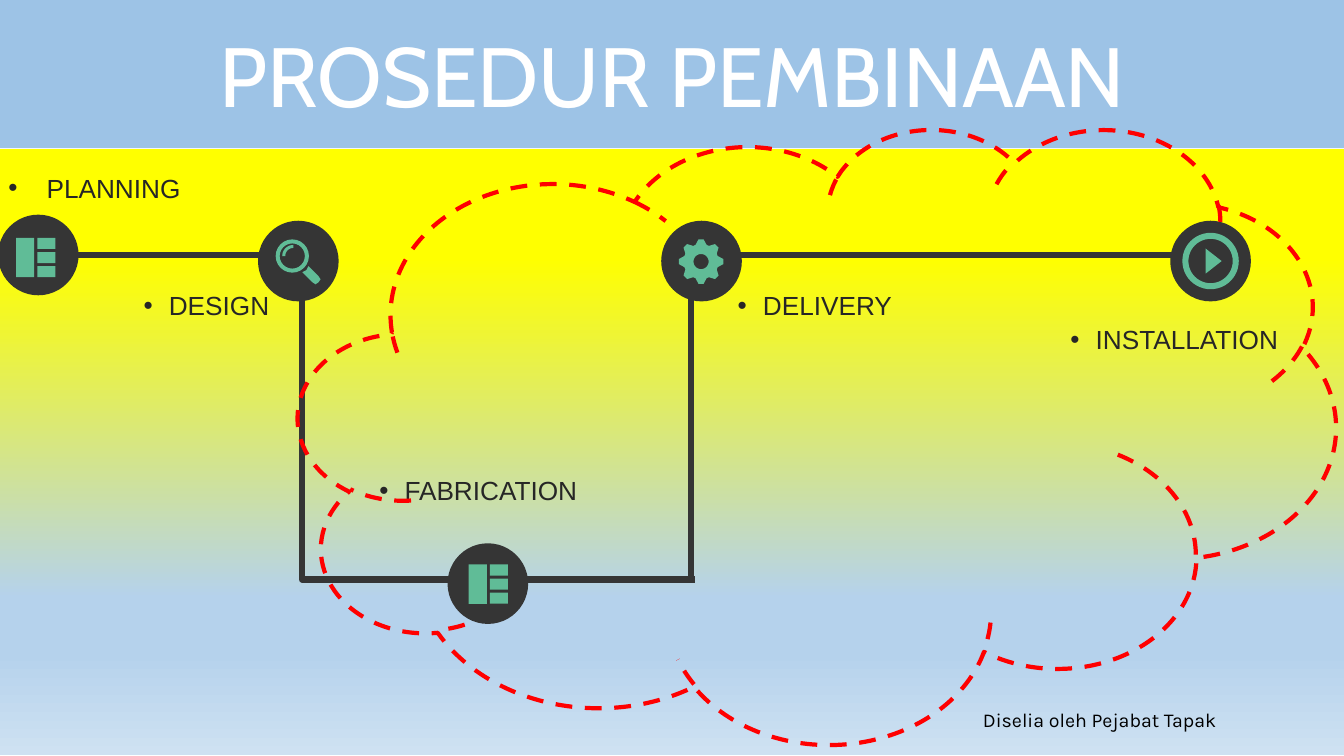
import dataclasses
import math

import lxml.etree
import pptx
import pptx.dml.color
import pptx.enum.dml
import pptx.enum.shapes
import pptx.enum.text
import pptx.oxml.ns
import pptx.util

CELL = pptx.util.Inches(0.1)
COLUMNS, ROWS = 133.33, 75

SHAPE = pptx.enum.shapes.MSO_SHAPE
ALIGN = pptx.enum.text.PP_ALIGN
MIDDLE = pptx.enum.text.MSO_ANCHOR.MIDDLE


@dataclasses.dataclass(frozen=True)
class Theme:
    banner: str = "9DC3E6"
    title_text: str = "FFFFFF"
    dark: str = "353535"
    icon: str = "60BC97"
    label_text: str = "262626"
    credit_text: str = "000000"
    cloud: str = "FF0000"
    backdrop: tuple = ((18, "FFFF00"), (74, "B5D2EC"), (83, "B5D2EC"), (100, "CEE1F2"))
    title_size: float = 60
    label_size: float = 18.7
    credit_size: float = 14
    route_width: float = 4.5
    cloud_width: float = 3


THEME = Theme()


def cells(*counts):
    """Turn numbers of grid cells into lengths."""
    return [pptx.util.Emu(round(count * CELL)) for count in counts]


def rgb(code):
    return pptx.dml.color.RGBColor.from_string(code)


def add_xml(parent, tag, **attributes):
    element = lxml.etree.SubElement(parent, pptx.oxml.ns.qn(tag))
    for name, value in attributes.items():
        element.set(name, str(value))
    return element


def paint(shape, color):
    shape.shadow.inherit = False
    shape.fill.solid()
    shape.fill.fore_color.rgb = rgb(color)
    shape.line.fill.background()


def format_text(text_frame, font_name, size, color, alignment):
    paragraph = text_frame.paragraphs[0]
    paragraph.alignment = alignment
    font = paragraph.runs[0].font
    font.name, font.size, font.color.rgb = font_name, pptx.util.Pt(size), rgb(color)
    return paragraph


def add_preset(slide, kind, left, top, width, height, color):
    shape = slide.shapes.add_shape(kind, *cells(left, top, width, height))
    paint(shape, color)
    return shape


def add_outline(slide, points, hole=()):
    """Draw a closed icon part, with an optional hole, from grid points."""
    start, *rest = [cells(*point) for point in points]
    builder = slide.shapes.build_freeform(*start)
    builder.add_line_segments(rest, close=True)
    if hole:
        start, *rest = [cells(*point) for point in hole]
        builder.move_to(*start)
        builder.add_line_segments(rest, close=True)
    paint(builder.convert_to_shape(), THEME.icon)


def polar(x, y, radius, degrees):
    angle = math.radians(degrees)
    return x + radius * math.cos(angle), y + radius * math.sin(angle)


def add_title(slide, text):
    title = slide.shapes.title
    title.left, title.top, title.width, title.height = cells(0, 0, COLUMNS, 14.7)
    title.fill.solid()
    title.fill.fore_color.rgb = rgb(THEME.banner)
    title.text_frame.text = text
    title.text_frame.auto_size = pptx.enum.text.MSO_AUTO_SIZE.NONE
    title.text_frame.vertical_anchor = MIDDLE
    format_text(title.text_frame, "Cabin", THEME.title_size, THEME.title_text, ALIGN.CENTER)


def add_backdrop(slide):
    backdrop = add_preset(slide, SHAPE.RECTANGLE, -0.2, 14.8, 133.6, 60.1, THEME.banner)
    backdrop.fill.gradient()
    backdrop.fill.gradient_angle = 270
    stops = next(backdrop.element.iter(pptx.oxml.ns.qn("a:gsLst")))
    for stop in list(stops):
        stops.remove(stop)
    for percent, color in THEME.backdrop:
        stop = add_xml(stops, "a:gs", pos=percent * 1000)
        add_xml(stop, "a:srgbClr", val=color)


def add_text_box(slide, text, left, top, width, height):
    box = slide.shapes.add_textbox(*cells(left, top, width, height))
    box.text_frame.word_wrap = True
    box.text_frame.text = text
    return box.text_frame


def add_step_label(slide, text, left, top, width, height, alignment, hanging=2.5, spacing=0.9):
    text_frame = add_text_box(slide, text, left, top, width, height)
    paragraph = format_text(text_frame, "Arial", THEME.label_size, THEME.label_text, alignment)
    paragraph.line_spacing = spacing
    paragraph.space_before = pptx.util.Pt(10)
    properties = paragraph.runs[0].font._element.getparent().getparent().get_or_add_pPr()
    indent, = cells(hanging)
    properties.set("marL", str(indent))
    properties.set("indent", str(-indent))
    add_xml(properties, "a:buFont", typeface="Arial")
    add_xml(properties, "a:buChar", char="•")


def add_credit(slide, text):
    text_frame = add_text_box(slide, text, 96.2, 67.7, 27.9, 7.4)
    text_frame.vertical_anchor = MIDDLE
    text_frame.margin_left, text_frame.margin_top = cells(1.3, 0.7)
    text_frame.margin_right, text_frame.margin_bottom = cells(1.3, 0.7)
    format_text(text_frame, "Karla", THEME.credit_size, THEME.credit_text, ALIGN.LEFT)


def add_route(slide, begin, end, bend):
    """Join two grid points by an elbow that turns at a share of its width."""
    route = slide.shapes.add_connector(
        pptx.enum.shapes.MSO_CONNECTOR.ELBOW, *cells(*begin, *end))
    route.line.color.rgb = rgb(THEME.dark)
    route.line.width = pptx.util.Pt(THEME.route_width)
    properties = route.element.spPr
    add_xml(properties, "a:effectLst")
    geometry = properties.find(pptx.oxml.ns.qn("a:prstGeom"))
    adjustments = geometry.find(pptx.oxml.ns.qn("a:avLst"))
    if adjustments is None:
        adjustments = add_xml(geometry, "a:avLst")
    add_xml(adjustments, "a:gd", name="adj1", fmla=f"val {round(bend * 100000)}")


def add_disc(slide, x, y):
    add_preset(slide, SHAPE.OVAL, x - 4, y - 4, 8, 8, THEME.dark)


def add_ring(slide, x, y, radius, thickness):
    ring = add_preset(
        slide, SHAPE.DONUT, x - radius, y - radius, 2 * radius, 2 * radius, THEME.icon)
    ring.adjustments[0] = thickness / (2 * radius)


def add_layout_icon(slide, x, y):
    add_preset(slide, SHAPE.RECTANGLE, x - 1.9, y - 1.9, 1.8, 3.9, THEME.icon)
    for row in range(3):
        add_preset(slide, SHAPE.RECTANGLE, x + 0.2, y - 1.9 + 1.4 * row, 1.8, 1.1, THEME.icon)


def add_magnifier_icon(slide, x, y):
    add_ring(slide, x, y, 1.65, 0.4)
    handle = ((1.6, 1), (2.6, 2), (2.8, 2.3), (2.6, 2.6), (2.3, 2.8), (2, 2.6), (1, 1.6), (1.4, 1.4))
    add_outline(slide, [(x + across, y + down) for across, down in handle])
    sweep = range(180, 271, 10)
    add_outline(slide, [polar(x + 0.1, y, 1.1, angle) for angle in sweep]
                + [polar(x + 0.1, y, 0.8, angle) for angle in reversed(sweep)])


def add_gear_icon(slide, x, y):
    tooth = ((1.74, -18.4), (2.22, -6.5), (2.22, 6.5), (1.74, 18.4))
    rim = [polar(x, y, radius, 45 * number + angle)
           for number in range(8) for radius, angle in tooth]
    add_outline(slide, rim, [polar(x, y, 0.75, angle) for angle in range(0, 360, 10)])


def add_play_icon(slide, x, y):
    add_ring(slide, x, y, 2.8, 0.6)
    add_outline(slide, [(x - 0.5, y - 1.25), (x + 1.1, y), (x - 0.5, y + 1.25)])


def add_cloud(slide):
    cloud = slide.shapes.add_shape(SHAPE.CLOUD, *cells(29.6, 12.7, 102.9, 61))
    cloud.shadow.inherit = False
    cloud.fill.background()
    cloud.line.color.rgb = rgb(THEME.cloud)
    cloud.line.width = pptx.util.Pt(THEME.cloud_width)
    cloud.line.dash_style = pptx.enum.dml.MSO_LINE.DASH


def main():
    presentation = pptx.Presentation()
    presentation.slide_width, presentation.slide_height = cells(COLUMNS, ROWS)
    slide = presentation.slides.add_slide(presentation.slide_layouts.get_by_name("Title Only"))
    add_title(slide, "PROSEDUR PEMBINAAN")
    add_backdrop(slide)
    add_step_label(slide, "PLANNING", -4.4, 16.6, 23.3, 3.3, ALIGN.RIGHT, hanging=3.8, spacing=1.0)
    add_step_label(slide, "DESIGN", 4.4, 28.6, 23.3, 3.3, ALIGN.RIGHT)
    add_step_label(slide, "FABRICATION", 35.9, 46.9, 23.1, 3.3, ALIGN.CENTER)
    add_step_label(slide, "DELIVERY", 72.2, 28.6, 23.3, 3.3, ALIGN.LEFT)
    add_step_label(slide, "INSTALLATION", 104.2, 31.9, 24.6, 2.9, ALIGN.CENTER)
    add_route(slide, (0, 25.3), (68.9, 57.5), 0.435)
    add_route(slide, (68.9, 57.5), (116.7, 25.3), -0.007)
    for x, y in ((3.8, 25.3), (29.6, 25.9), (48.4, 57.9), (69.6, 25.9), (120.1, 25.9)):
        add_disc(slide, x, y)
    add_layout_icon(slide, 3.5, 25.5)
    add_magnifier_icon(slide, 29, 25.4)
    add_layout_icon(slide, 48.4, 57.9)
    add_gear_icon(slide, 69.55, 25.95)
    add_play_icon(slide, 120.1, 25.9)
    add_cloud(slide)
    add_credit(slide, "Diselia oleh Pejabat Tapak")
    presentation.save("out.pptx")


if __name__ == "__main__":
    main()
